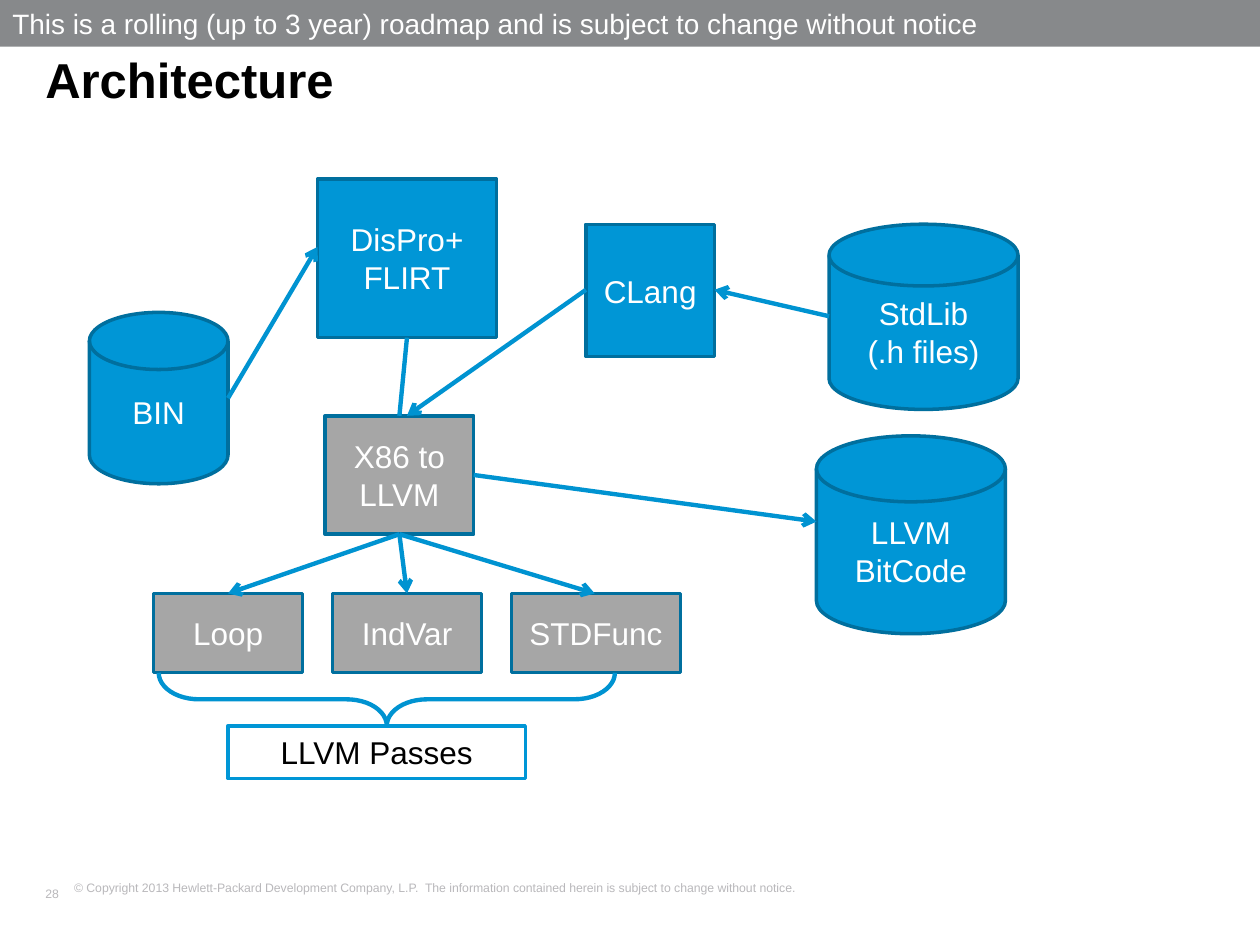
from lxml.etree import SubElement
from pptx import Presentation
from pptx.dml.color import RGBColor
from pptx.enum.shapes import MSO_CONNECTOR, MSO_SHAPE
from pptx.enum.text import MSO_ANCHOR, PP_ALIGN
from pptx.oxml.ns import qn
from pptx.util import Inches, Pt

BLUE = RGBColor(0x00, 0x96, 0xD6)
LINK = RGBColor(0x00, 0x93, 0xD1)
EDGE = RGBColor(0x00, 0x6F, 0x9E)
GRAY = RGBColor(0xA6, 0xA6, 0xA6)
BAND = RGBColor(0x87, 0x89, 0x8B)
PALE = RGBColor(0xB9, 0xB8, 0xBB)
WHITE = RGBColor(0xFF, 0xFF, 0xFF)
BLACK = RGBColor(0x00, 0x00, 0x00)
RECT = MSO_SHAPE.RECTANGLE
DISK = MSO_SHAPE.FLOWCHART_MAGNETIC_DISK


def write(frame, lines, size, color, align=PP_ALIGN.LEFT, bold=False):
    """Fill a text frame with one paragraph per line."""
    for i, line in enumerate(lines):
        para = frame.paragraphs[0] if i == 0 else frame.add_paragraph()
        para.alignment = align
        run = para.add_run()
        run.text = line
        run.font.name = "Arial"
        run.font.size = Pt(size)
        run.font.bold = bold
        run.font.color.rgb = color


def add_box(kind, spot, fill, edge=None):
    box = slide.shapes.add_shape(kind, *map(Inches, spot))
    box.shadow.inherit = False
    box.fill.solid()
    box.fill.fore_color.rgb = fill
    if edge is None:
        box.line.fill.background()
    else:
        box.line.color.rgb = edge
        box.line.width = Pt(2)
    box.text_frame.word_wrap = True
    box.text_frame.vertical_anchor = MSO_ANCHOR.MIDDLE
    return box


deck = Presentation()
deck.slide_width = Inches(10)
deck.slide_height = Inches(7.5)
slide = deck.slides.add_slide(deck.slide_layouts[5])

# Footer
note = slide.shapes.add_textbox(Inches(0.49), Inches(6.94), Inches(8.76), Inches(0.33))
note.text_frame.word_wrap = True
write(note.text_frame, ["© Copyright 2013 Hewlett-Packard Development Company, L.P.  "
                        "The information contained herein is subject to change without notice."],
      7, PALE)
page = slide.shapes.add_textbox(Inches(0.36), Inches(6.98), Inches(0.35), Inches(0.22))
page.text_frame.margin_left = 0
page.text_frame.word_wrap = False
page.text_frame.vertical_anchor = MSO_ANCHOR.MIDDLE
write(page.text_frame, ["28"], 7, PALE)

# Title
title = slide.shapes.title
title.left, title.top = Inches(0.36), Inches(0.34)
title.width, title.height = Inches(8.88), Inches(0.63)
frame = title.text_frame
frame.margin_left = frame.margin_right = frame.margin_bottom = 0
frame.margin_top = Inches(0.05)
frame.vertical_anchor = MSO_ANCHOR.TOP
write(frame, ["Architecture"], 28, BLACK, bold=True)

# Parts of the pipeline
parts = [
    (RECT, (2.52, 1.42, 1.42, 1.26), BLUE, ["DisPro+", "FLIRT"]),
    (DISK, (0.71, 2.48, 1.1, 1.36), BLUE, ["BIN"]),
    (RECT, (2.58, 3.3, 1.18, 0.94), GRAY, ["X86 to LLVM"]),
    (RECT, (4.65, 1.78, 1.02, 1.05), BLUE, ["CLang"]),
    (DISK, (6.58, 1.78, 1.5, 1.47), BLUE, ["StdLib", "(.h files)"]),
    (DISK, (6.48, 3.46, 1.5, 1.57), BLUE, ["LLVM BitCode"]),
    (RECT, (1.22, 4.71, 1.18, 0.63), GRAY, ["Loop"]),
    (RECT, (2.64, 4.71, 1.18, 0.63), GRAY, ["IndVar"]),
    (RECT, (4.06, 4.71, 1.34, 0.63), GRAY, ["STDFunc"]),
]
for kind, spot, fill, lines in parts:
    box = add_box(kind, spot, fill, EDGE)
    write(box.text_frame, lines, 18, WHITE, PP_ALIGN.CENTER)

# Brace over the passes
brace = slide.shapes.add_shape(MSO_SHAPE.LEFT_BRACE, Inches(2.86), Inches(3.74),
                               Inches(0.42), Inches(3.62))
brace.rotation = 270
brace.adjustments[0] = 0.76
brace.adjustments[1] = 0.5
brace.shadow.inherit = False
brace.fill.background()
brace.line.color.rgb = LINK
brace.line.width = Pt(2.5)

passes = add_box(RECT, (1.81, 5.76, 2.36, 0.42), WHITE, BLUE)
write(passes.text_frame, ["LLVM Passes"], 18, BLACK, PP_ALIGN.CENTER)

# Links: start, end, arrowhead
links = [
    ((1.81, 3.16), (2.52, 1.96), True),
    ((3.23, 2.68), (3.17, 3.3), False),
    ((4.65, 2.3), (3.23, 3.3), True),
    ((3.76, 3.77), (6.48, 4.14), True),
    ((6.58, 2.51), (5.67, 2.3), True),
]
links += [((3.17, 4.24), (x, 4.71), True) for x in (4.72, 3.23, 1.81)]
for start, end, arrow in links:
    link = slide.shapes.add_connector(MSO_CONNECTOR.STRAIGHT, *map(Inches, start + end))
    link.line.color.rgb = LINK
    link.line.width = Pt(2.5)
    if arrow:
        SubElement(link.line._get_or_add_ln(), qn("a:tailEnd"), type="arrow")
    SubElement(link._element.spPr, qn("a:effectLst"))

# Roadmap banner
banner = add_box(RECT, (0, 0, 10, 0.37), BAND)
write(banner.text_frame,
      ["This is a rolling (up to 3 year) roadmap and is subject to change without notice"],
      16, WHITE)

deck.save("out.pptx")
